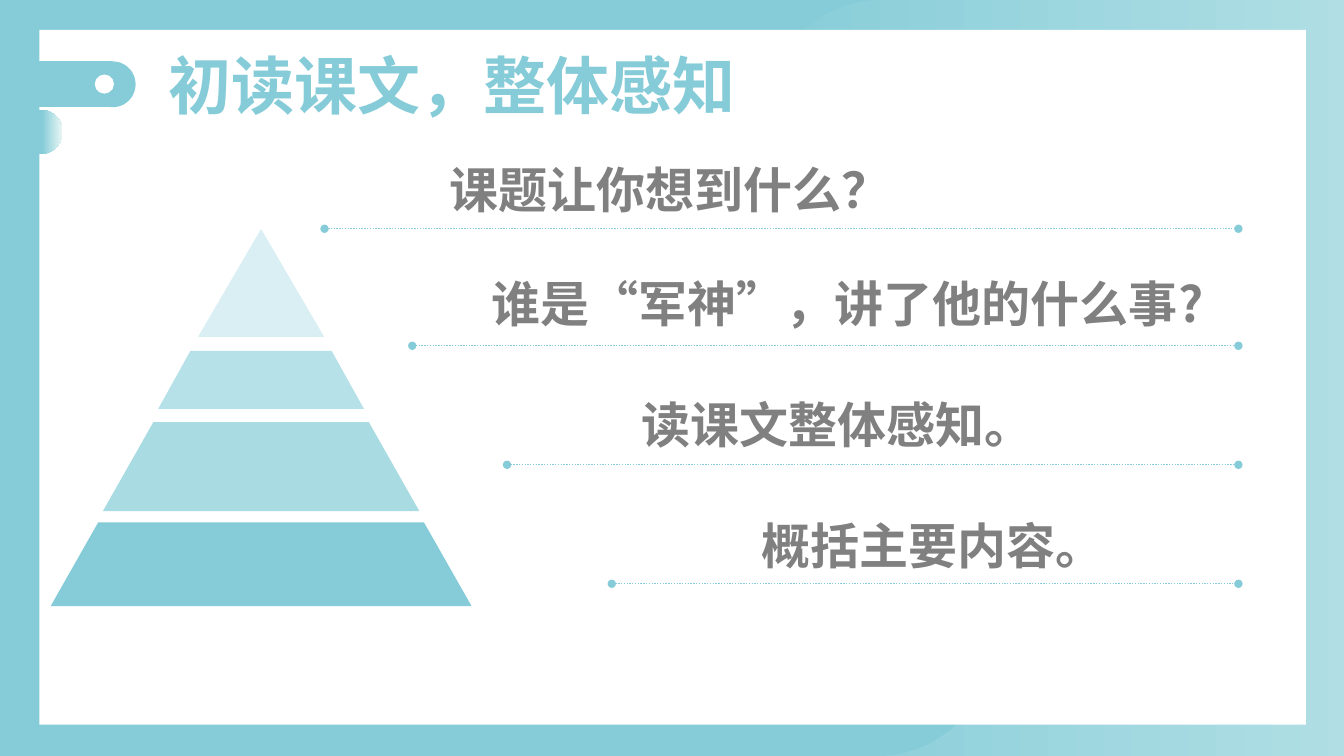
from lxml import etree
from pptx import Presentation
from pptx.dml.color import RGBColor
from pptx.enum.dml import MSO_LINE
from pptx.enum.shapes import MSO_CONNECTOR, MSO_SHAPE
from pptx.enum.text import MSO_AUTO_SIZE, PP_ALIGN
from pptx.oxml.ns import qn
from pptx.util import Pt

RECTANGLE = MSO_SHAPE.RECTANGLE
OVAL = MSO_SHAPE.OVAL
TRIANGLE = MSO_SHAPE.ISOSCELES_TRIANGLE
WAVE = MSO_SHAPE.FLOWCHART_PUNCHED_TAPE
STRAIGHT = MSO_CONNECTOR.STRAIGHT
DOTTED = MSO_LINE.ROUND_DOT
LEFT, CENTER = PP_ALIGN.LEFT, PP_ALIGN.CENTER
GROW = MSO_AUTO_SIZE.SHAPE_TO_FIT_TEXT

TEAL = RGBColor(0x85, 0xCC, 0xD8)
MINT = RGBColor(0xEA, 0xF7, 0xF5)
WHITE = RGBColor(0xFF, 0xFF, 0xFF)
GRAY = RGBColor(0x80, 0x80, 0x80)
TIER_TOP = RGBColor(0xD9, 0xEF, 0xF3)
TIER_SECOND = RGBColor(0xB6, 0xE1, 0xE8)
TIER_THIRD = RGBColor(0xA8, 0xDB, 0xE2)
FONT = "Noto Sans CJK SC"

TIERS = [
    (0, 77, 0, 45, TIER_TOP),
    (87, 128.5, 50.4, 73.5, TIER_SECOND),
    (138, 201.5, 77, 113, TIER_THIRD),
    (209.5, 269.3, 116.3, 150.3, TEAL),
]
QUESTIONS = [
    ("课题让你想到什么？", 314, 110.2, 373, LEFT, 231.8, 163.4),
    ("谁是“军神”，讲了他的什么事?", 344, 191.5, 541, LEFT, 294.5, 247),
    ("读课文整体感知。", 412, 278, 373, CENTER, 362.2, 332),
    ("概括主要内容。", 480, 365, 373, CENTER, 437, 417),
]


def finish(shape, color, outlined=False):
    shape.shadow.inherit = False
    if color is not None:
        shape.fill.solid()
        shape.fill.fore_color.rgb = color
    if outlined:
        shape.line.color.rgb = color
        shape.line.width = Pt(1)
    else:
        shape.line.fill.background()
    return shape


def add_block(shapes, kind, box, color=None, outlined=False):
    shape = shapes.add_shape(kind, *[Pt(length) for length in box])
    return finish(shape, color, outlined)


def fade(shape, angle, start=0):
    shape.fill.gradient()
    shape.fill.gradient_angle = angle
    for stop, color, position in zip(shape.fill.gradient_stops, (TEAL, MINT), (start, 1)):
        stop.color.rgb = color
        stop.position = position


def add_text(slide, text, box, size=35, color=GRAY, align=LEFT):
    text_box = slide.shapes.add_textbox(*[Pt(length) for length in box])
    frame = text_box.text_frame
    frame.word_wrap = True
    frame.auto_size = GROW
    paragraph = frame.paragraphs[0]
    paragraph.alignment = align
    run = paragraph.add_run()
    run.text = text
    run.font.name = FONT
    run.font.size = Pt(size)
    run.font.bold = True
    run.font.color.rgb = color
    properties = run.font._element
    etree.SubElement(properties, qn("a:ea")).set("typeface", FONT)


def add_dotted_line(slide, left, right, top):
    line = slide.shapes.add_connector(STRAIGHT, Pt(left), Pt(top), Pt(right), Pt(top))
    line.line.color.rgb = TEAL
    line.line.width = Pt(1)
    line.line.dash_style = DOTTED
    outline = line.line._get_or_add_ln()
    for end in ("a:headEnd", "a:tailEnd"):
        etree.SubElement(outline, qn(end)).set("type", "oval")
    etree.SubElement(line._element.spPr, qn("a:effectLst"))


def draw_background(slide, left, top, width, height):
    shapes = slide.shapes
    add_block(shapes, RECTANGLE, (left, top, width, height), TEAL)
    length = 1002
    wave_left = left + 528 + (length - height) / 2
    wave_top = top + (height - length) / 2
    wave = add_block(shapes, WAVE, (wave_left, wave_top, height, length))
    wave.rotation = 90
    fade(wave, 90)
    add_block(shapes, RECTANGLE, (left + 28.2, top + 21.4, width - 55.4, height - 43.8), WHITE)


def draw_pyramid(slide, left, top, width):
    shapes = slide.shapes.add_group_shape().shapes
    middle = left + width / 2
    for upper, lower, upper_half, lower_half, color in TIERS:
        if upper_half == 0:
            box = (middle - lower_half, top + upper, 2 * lower_half, lower - upper)
            add_block(shapes, TRIANGLE, box, color)
            continue
        corners = [
            (Pt(middle + side), Pt(top + edge))
            for side, edge in (
                (-upper_half, upper), (upper_half, upper),
                (lower_half, lower), (-lower_half, lower),
            )
        ]
        builder = shapes.build_freeform(*corners[0])
        builder.add_line_segments(corners[1:], close=True)
        finish(builder.convert_to_shape(), color)


def draw_questions(slide, right):
    for text, left, top, width, align, line_left, line_top in QUESTIONS:
        add_dotted_line(slide, line_left, right, line_top)
        add_text(slide, text, (left, top, width, 49.6), align=align)


def draw_heading(slide, left, top, text):
    shapes = slide.shapes
    size = 31.7
    add_block(shapes, RECTANGLE, (left, top, 52, size), TEAL, outlined=True)
    add_block(shapes, OVAL, (left + 36.5, top, size, size), TEAL, outlined=True)
    bead = add_block(shapes, OVAL, (left - 15.2, top + 34, size, size))
    fade(bead, 0, start=0.54)
    add_block(shapes, OVAL, (left + 39.5, top + 8.8, 13.7, 13.7), WHITE)
    add_text(slide, text, (left + 84.9, top - 15, 427, 62), size=45, color=TEAL)


def main():
    presentation = Presentation()
    presentation.slide_width = Pt(960)
    presentation.slide_height = Pt(540)
    slide = presentation.slides.add_slide(presentation.slide_layouts[6])
    draw_background(slide, 0, 0, 960, 540)
    draw_pyramid(slide, 36.2, 163.6, 300.6)
    draw_questions(slide, 884.6)
    draw_heading(slide, 28.2, 44.4, "初读课文，整体感知")
    presentation.save("out.pptx")


if __name__ == "__main__":
    main()
